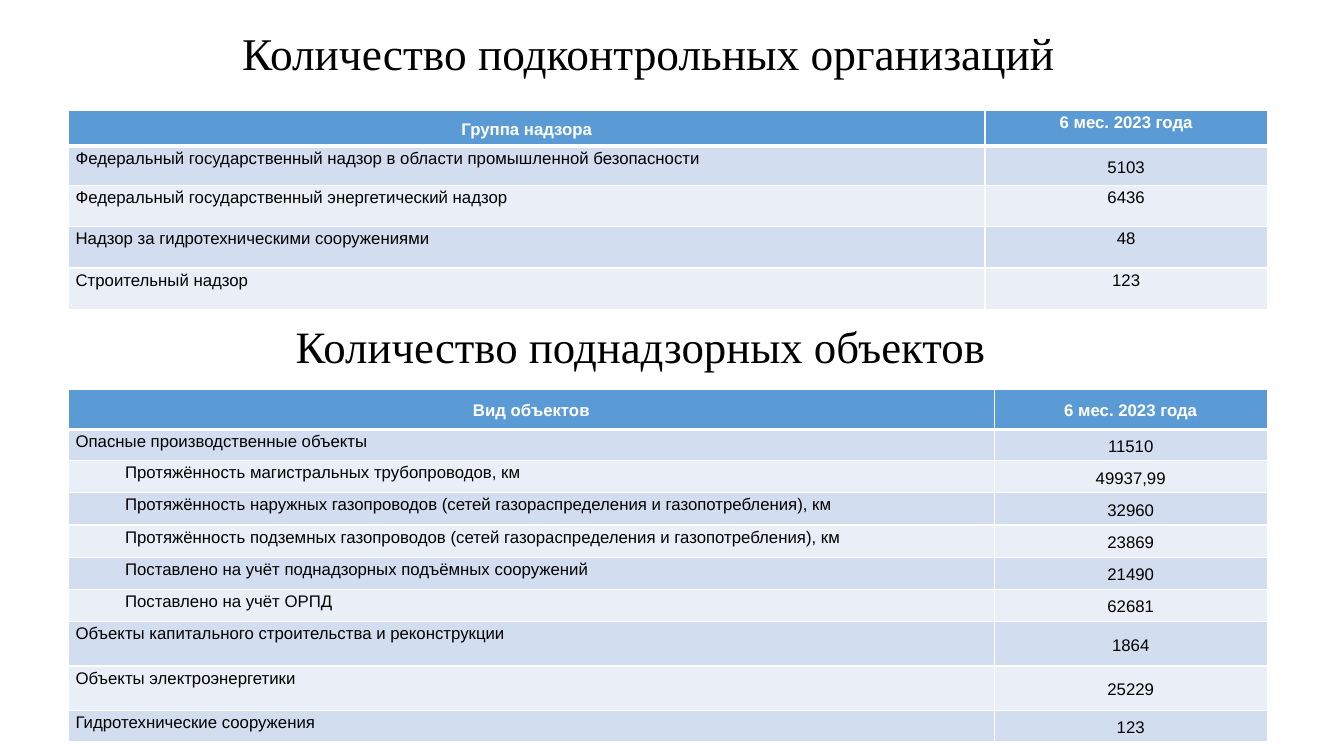
from dataclasses import dataclass

from lxml import etree
from pptx import Presentation
from pptx.dml.color import RGBColor
from pptx.enum.text import MSO_ANCHOR, PP_ALIGN
from pptx.oxml.ns import qn
from pptx.util import Inches, Pt

LEFT, CENTER = PP_ALIGN.LEFT, PP_ALIGN.CENTER
TOP, MIDDLE = MSO_ANCHOR.TOP, MSO_ANCHOR.MIDDLE

BLACK = RGBColor(0x00, 0x00, 0x00)
WHITE = RGBColor(0xFF, 0xFF, 0xFF)
HEADER_BLUE = RGBColor(0x5B, 0x9B, 0xD5)
BANDS = (RGBColor(0xD2, 0xDE, 0xEF), RGBColor(0xEA, 0xEF, 0xF7))

TABLE_LEFT = 0.68
INDENT = 0.49


@dataclass
class Row:
    label: str
    value: str
    height: float
    indent: float = 0
    label_anchor: MSO_ANCHOR = TOP
    value_anchor: MSO_ANCHOR = MIDDLE


@dataclass
class Section:
    title: str
    title_box: tuple[float, float, float, float]
    title_size: float
    title_spacing: float
    table_top: float
    widths: tuple[float, float]
    rows: list[Row]


SECTIONS = [
    Section(
        "Количество подконтрольных организаций",
        (0.68, 0.31, 11.5, 0.48), 32.4, 0.9, 1.1, (9.09, 2.8),
        [
            Row("Группа надзора", "6 мес. 2023 года", 0.35,
                label_anchor=MIDDLE, value_anchor=TOP),
            Row("Федеральный государственный надзор в области промышленной безопасности",
                "5103", 0.39),
            Row("Федеральный государственный энергетический надзор",
                "6436", 0.41, value_anchor=TOP),
            Row("Надзор за гидротехническими сооружениями",
                "48", 0.41, value_anchor=TOP),
            Row("Строительный надзор", "123", 0.41, value_anchor=TOP),
        ],
    ),
    Section(
        "Количество поднадзорных объектов",
        (0.29, 3.11, 12.13, 0.64), 32, 1.0, 3.86, (9.18, 2.71),
        [
            Row("Вид объектов", "6 мес. 2023 года", 0.4, label_anchor=MIDDLE),
            Row("Опасные производственные объекты", "11510", 0.31),
            Row("Протяжённость магистральных трубопроводов, км",
                "49937,99", 0.32, INDENT),
            Row("Протяжённость наружных газопроводов (сетей газораспределения и газопотребления), км",
                "32960", 0.32, INDENT),
            Row("Протяжённость подземных газопроводов (сетей газораспределения и газопотребления), км",
                "23869", 0.32, INDENT),
            Row("Поставлено на учёт поднадзорных подъёмных сооружений",
                "21490", 0.32, INDENT),
            Row("Поставлено на учёт ОРПД", "62681", 0.32, INDENT),
            Row("Объекты капитального строительства и реконструкции", "1864", 0.44),
            Row("Объекты электроэнергетики", "25229", 0.44),
            Row("Гидротехнические сооружения", "123", 0.31),
        ],
    ),
]


def write(tf, text: str, *, size: float = 12, font: str = "Arial",
          color: RGBColor = BLACK, bold: bool = False, align: PP_ALIGN = CENTER,
          spacing: float = 1.15, indent: float = 0) -> None:
    p = tf.paragraphs[0]
    p.alignment = align
    p.line_spacing = spacing
    if indent:
        pPr = p._p.get_or_add_pPr()
        pPr.set("marL", str(Inches(indent)))
        pPr.set("indent", "0")
    r = p.add_run()
    r.text = text
    r.font.size = Pt(size)
    r.font.name = font
    r.font.bold = bold
    r.font.color.rgb = color


def set_borders(cell, top: float, bottom: float) -> None:
    tcPr = cell._tc.get_or_add_tcPr()
    sides = {"lnL": 1, "lnR": 1, "lnT": top, "lnB": bottom}
    for i, (side, width) in enumerate(sides.items()):
        ln = etree.Element(qn(f"a:{side}"), w=str(Pt(width)))
        fill = etree.SubElement(ln, qn("a:solidFill"))
        etree.SubElement(fill, qn("a:srgbClr"), val=str(WHITE))
        tcPr.insert(i, ln)


def add_title(s, section: Section) -> None:
    tf = s.shapes.add_textbox(*map(Inches, section.title_box)).text_frame
    tf.word_wrap = True
    tf.vertical_anchor = MIDDLE
    write(tf, section.title, size=section.title_size, font="Times New Roman",
          spacing=section.title_spacing)


def add_section_table(s, section: Section) -> None:
    rows = section.rows
    table = s.shapes.add_table(
        len(rows), 2, Inches(TABLE_LEFT), Inches(section.table_top),
        Inches(sum(section.widths)), Inches(sum(row.height for row in rows))).table
    for column, width in zip(table.columns, section.widths):
        column.width = Inches(width)

    for i, row in enumerate(rows):
        header = i == 0
        table.rows[i].height = Inches(row.height)
        columns = (
            (row.label, row.label_anchor, CENTER if header else LEFT, row.indent),
            (row.value, row.value_anchor, CENTER, 0),
        )
        for j, (text, anchor, align, indent) in enumerate(columns):
            cell = table.cell(i, j)
            cell.margin_left = cell.margin_right = Inches(0.07)
            cell.margin_top = cell.margin_bottom = 0
            cell.vertical_anchor = anchor
            cell.fill.solid()
            cell.fill.fore_color.rgb = HEADER_BLUE if header else BANDS[(i - 1) % 2]
            # A thicker rule separates the header from the body
            set_borders(cell, top=3 if i == 1 else 1, bottom=3 if header else 1)
            write(cell.text_frame, text, color=WHITE if header else BLACK,
                  bold=header, align=align, indent=indent)


def main() -> None:
    prs = Presentation()
    prs.slide_width, prs.slide_height = Inches(13.33), Inches(7.5)
    s = prs.slides.add_slide(prs.slide_layouts[6])
    # Each section is a heading with its table below
    for section in SECTIONS:
        add_title(s, section)
        add_section_table(s, section)
    prs.save("out.pptx")


if __name__ == "__main__":
    main()
